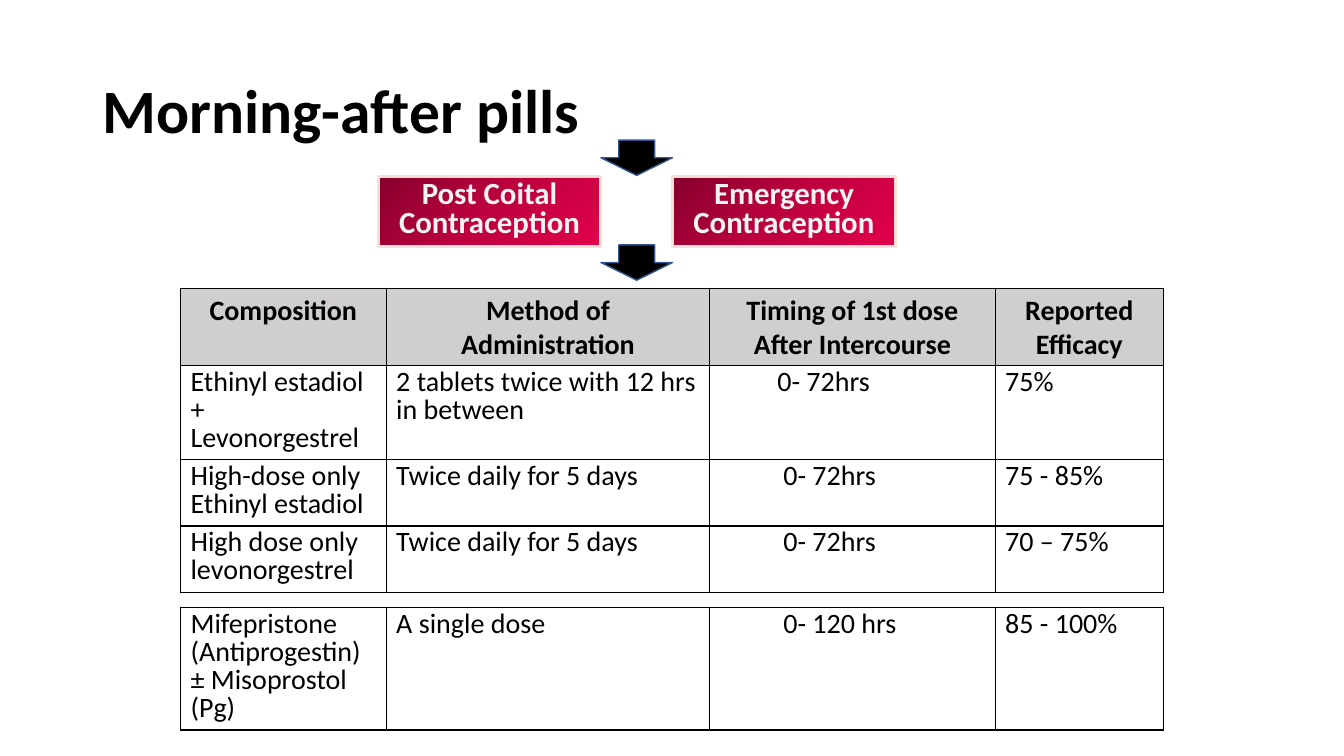
from copy import deepcopy

from lxml.etree import SubElement
from pptx import Presentation
from pptx.dml.color import RGBColor
from pptx.enum.shapes import MSO_SHAPE as Shape
from pptx.enum.text import MSO_ANCHOR as Anchor, MSO_AUTO_SIZE as AutoSize, PP_ALIGN as Align
from pptx.oxml.ns import qn
from pptx.util import Inches, Pt

COLUMN_WIDTHS = [2.04, 3.21, 2.83, 1.67]
TIMING_COLUMN = 2
HEADINGS = ["Composition", "Method of Administration",
            "Timing of 1st dose\vAfter Intercourse", "Reported Efficacy"]
COMBINED_AND_HIGH_DOSE = [
    ["Ethinyl estadiol + Levonorgestrel", "2 tablets twice with 12 hrs in between",
     "0- 72hrs", "75%"],
    ["High-dose only\nEthinyl estadiol", "Twice daily for 5 days", "0- 72hrs", "75 - 85%"],
    ["High dose only levonorgestrel", "Twice daily for 5 days", "0- 72hrs", "70 – 75%"],
]
MIFEPRISTONE = [["Mifepristone (Antiprogestin) ± Misoprostol (Pg)", "A single dose",
                 "0- 120 hrs", "85 - 100%"]]


def color(value):
    return RGBColor.from_string(value)


def write(frame, text, size=20, ink="000000", bold=False, align=Align.LEFT,
          spacing=None, indent=0):
    """Fill a text frame; each line of text is one paragraph."""
    frame.word_wrap = True
    frame.text = text
    for para in frame.paragraphs:
        para.alignment = align
        if spacing:
            para.line_spacing = spacing
        if indent:
            properties = para._p.get_or_add_pPr()
            properties.set("marL", str(Inches(indent)))
            properties.set("indent", "0")
        for span in para.runs:
            span.font.name = "Calibri"
            span.font.size = Pt(size)
            span.font.bold = bold
            span.font.color.rgb = color(ink)


def add_borders(cell, ink="000000", width=1):
    properties = cell._tc.get_or_add_tcPr()
    for side in ("a:lnL", "a:lnR", "a:lnT", "a:lnB"):
        line = SubElement(properties, qn(side), w=str(Pt(width)))
        fill = SubElement(line, qn("a:solidFill"))
        SubElement(fill, qn("a:srgbClr"), val=ink)


class PillSlide:
    gradient = ["86002C", "BE003F", "E2004B"]
    header_fill = "D0CECE"

    def __init__(self, page):
        self.page = page

    def title(self, text, left, top, width, height):
        box = self.page.shapes.add_textbox(*map(Inches, (left, top, width, height)))
        box.text_frame.vertical_anchor = Anchor.MIDDLE
        write(box.text_frame, text, size=44, bold=True, spacing=0.9)

    def shape(self, kind, left, top, width, height, line, line_width):
        shape = self.page.shapes.add_shape(kind, *map(Inches, (left, top, width, height)))
        shape.shadow.inherit = False
        shape.line.color.rgb = color(line)
        shape.line.width = Pt(line_width)
        return shape

    def label(self, text, left, top):
        label = self.shape(Shape.RECTANGLE, left, top, 2.21, 0.7, "FFDED5", 2.25)
        label.fill.gradient()
        label.fill.gradient_angle = 315
        stops = label._element.spPr.find(".//" + qn("a:gsLst"))
        stops.insert(1, deepcopy(stops[0]))
        for index, (stop, ink) in enumerate(zip(label.fill.gradient_stops, self.gradient)):
            stop.position = index / 2
            stop.color.rgb = color(ink)
        frame = label.text_frame
        frame.vertical_anchor = Anchor.TOP
        write(frame, text, size=22, ink="F3F3F3", bold=True,
              align=Align.CENTER, spacing=Pt(21))
        frame.auto_size = AutoSize.SHAPE_TO_FIT_TEXT

    def down_arrow(self, left, top):
        arrow = self.shape(Shape.DOWN_ARROW, left, top, 0.71, 0.35, "325491", 1)
        arrow.fill.solid()
        arrow.fill.fore_color.rgb = color("000000")

    def table(self, rows, heights, left, top, timing_indents, headings=None):
        all_rows = ([headings] if headings else []) + rows
        indents = ([0] if headings else []) + timing_indents
        table = self.page.shapes.add_table(
            len(all_rows), len(COLUMN_WIDTHS), Inches(left), Inches(top),
            Inches(sum(COLUMN_WIDTHS)), Inches(sum(heights))).table
        table.first_row = bool(headings)
        table.horz_banding = False
        for column, width in zip(table.columns, COLUMN_WIDTHS):
            column.width = Inches(width)
        for row, height, texts, indent in zip(table.rows, heights, all_rows, indents):
            row.height = Inches(height)
            for index, (cell, text) in enumerate(zip(row.cells, texts)):
                add_borders(cell)
                if texts is headings:
                    cell.fill.solid()
                    cell.fill.fore_color.rgb = color(self.header_fill)
                    write(cell.text_frame, text, bold=True, align=Align.CENTER)
                else:
                    cell.fill.background()
                    write(cell.text_frame, text, spacing=Pt(20),
                          indent=indent if index == TIMING_COLUMN else 0)


def main():
    deck = Presentation()
    deck.slide_width, deck.slide_height = Inches(13.33), Inches(7.5)
    slide = PillSlide(deck.slides.add_slide(deck.slide_layouts[6]))
    slide.title("Morning-after pills", 0.92, 0.4, 11.5, 1.45)
    slide.label("Emergency Contraception", 6.67, 1.75)
    slide.label("Post Coital Contraception", 3.75, 1.75)
    slide.table(COMBINED_AND_HIGH_DOSE, [0.7, 0.62, 0.63, 0.64], 1.79, 2.86,
                [0.57, 0.63, 0.63], HEADINGS)
    slide.table(MIFEPRISTONE, [0.37], 1.79, 6.03, [0.63])
    for top in (1.39, 2.43):
        slide.down_arrow(5.96, top)
    deck.save("out.pptx")


if __name__ == "__main__":
    main()
